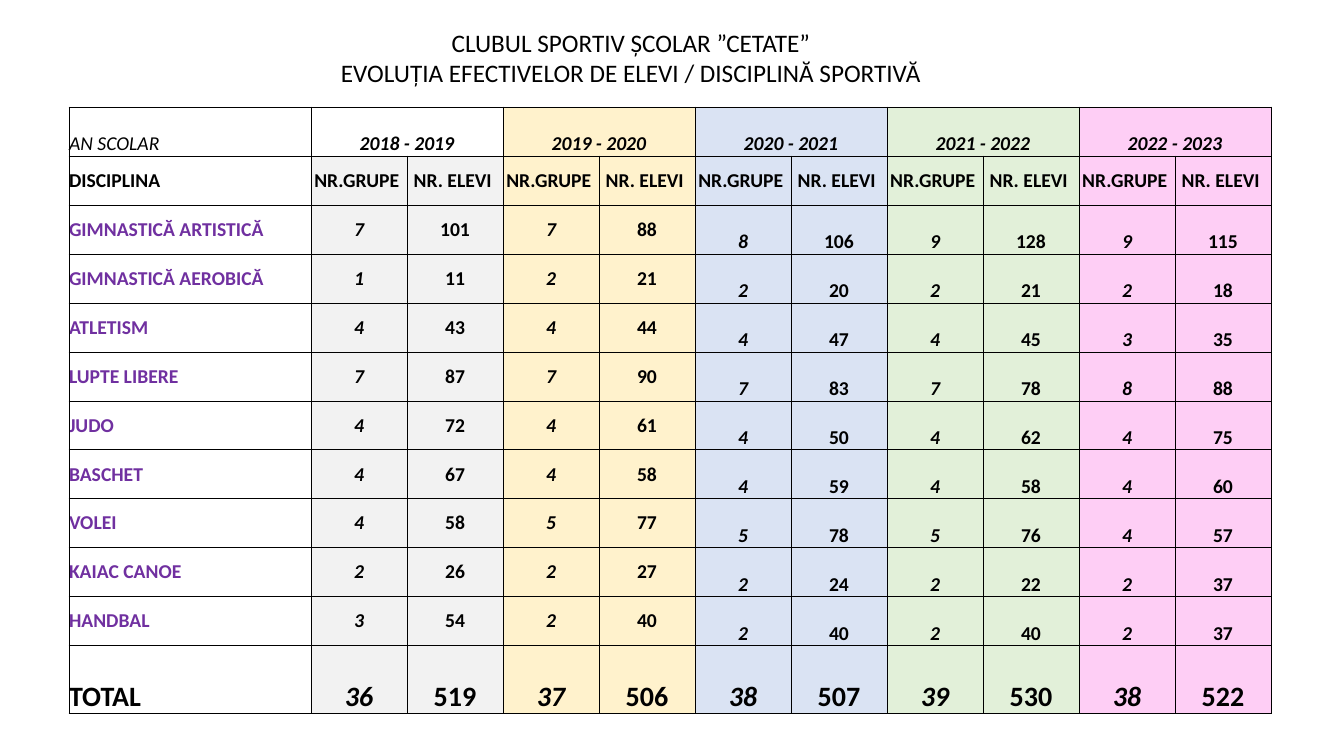
import lxml.etree
import pptx
import pptx.dml.color
import pptx.enum.text
import pptx.oxml.ns
import pptx.util

THEME = {
    "font": "Calibri",
    "text": "000000",
    "discipline": "7030A0",
    "border": "000000",
    "years": ["F2F2F2", "FFF2CC", "DAE3F3", "E2F0D9", "FECEF5"],
    "title_size": 18,
    "cell_size": 14,
    "total_size": 20,
    "border_width": 0.5,
}
ALIGN = pptx.enum.text.PP_ALIGN
ANCHOR = pptx.enum.text.MSO_ANCHOR
qn = pptx.oxml.ns.qn


def px(n):
    return pptx.util.Emu(round(n * 914400 / 100.8))


def write(p, text, size=THEME["cell_size"], color=THEME["text"], bold=False, italic=False, align=ALIGN.CENTER):
    p.alignment = align
    r = p.add_run()
    r.text = text
    r.font.name = THEME["font"]
    r.font.size = pptx.util.Pt(size)
    r.font.color.rgb = pptx.dml.color.RGBColor.from_string(color)
    r.font.bold = bold
    r.font.italic = italic


years = ["2018 - 2019", "2019 - 2020", "2020 - 2021", "2021 - 2022", "2022 - 2023"]
disciplines = [
    ("GIMNASTICĂ ARTISTICĂ", 7, 101, 7, 88, 8, 106, 9, 128, 9, 115),
    ("GIMNASTICĂ AEROBICĂ", 1, 11, 2, 21, 2, 20, 2, 21, 2, 18),
    ("ATLETISM", 4, 43, 4, 44, 4, 47, 4, 45, 3, 35),
    ("LUPTE LIBERE", 7, 87, 7, 90, 7, 83, 7, 78, 8, 88),
    ("JUDO", 4, 72, 4, 61, 4, 50, 4, 62, 4, 75),
    ("BASCHET", 4, 67, 4, 58, 4, 59, 4, 58, 4, 60),
    ("VOLEI", 4, 58, 5, 77, 5, 78, 5, 76, 4, 57),
    ("KAIAC CANOE", 2, 26, 2, 27, 2, 24, 2, 22, 2, 37),
    ("HANDBAL", 3, 54, 2, 40, 2, 40, 2, 40, 2, 37),
]
total = ("TOTAL", 36, 519, 37, 506, 38, 507, 39, 530, 38, 522)
year_row = ["AN SCOLAR"]
for year in years:
    year_row += [year, ""]
label_row = ["DISCIPLINA"] + ["NR.GRUPE ", "NR. ELEVI "] * len(years)
rows = [year_row, label_row, *disciplines, total]
last = len(rows) - 1

prs = pptx.Presentation()
prs.slide_width, prs.slide_height = px(1344), px(756)
slide = prs.slides.add_slide(prs.slide_layouts[5])

title = slide.shapes.title
title.left, title.top, title.width, title.height = px(328), px(22), px(606), px(72)
tf = title.text_frame
tf.word_wrap = False
tf.auto_size = pptx.enum.text.MSO_AUTO_SIZE.SHAPE_TO_FIT_TEXT
tf.vertical_anchor = ANCHOR.TOP
write(tf.paragraphs[0], "CLUBUL SPORTIV ȘCOLAR ”CETATE”", size=THEME["title_size"])
write(tf.add_paragraph(), "EVOLUȚIA EFECTIVELOR DE ELEVI / DISCIPLINĂ SPORTIVĂ", size=THEME["title_size"])

label_width, value_width, row_height, total_height = 242, 96, 49, 68
columns = len(label_row)
table = slide.shapes.add_table(
    len(rows), columns, px(69), px(107),
    px(label_width + value_width * (columns - 1)),
    px(row_height * last + total_height),
).table
table.first_row = False
table.horz_banding = False
for c in range(columns):
    table.columns[c].width = px(value_width if c else label_width)
for r in range(len(rows)):
    table.rows[r].height = px(total_height if r == last else row_height)
for c in range(1, columns, 2):
    table.cell(0, c).merge(table.cell(0, c + 1))

for r, row in enumerate(rows):
    for c, value in enumerate(row):
        cell = table.cell(r, c)
        cell.margin_left = cell.margin_right = cell.margin_top = cell.margin_bottom = 0
        is_data = 1 < r < last
        at_bottom = r in (0, last) or (is_data and c >= 5)
        cell.vertical_anchor = ANCHOR.BOTTOM if at_bottom else ANCHOR.MIDDLE

        tcPr = cell._tc.get_or_add_tcPr()
        for side in ("a:lnL", "a:lnR", "a:lnT", "a:lnB"):
            ln = lxml.etree.SubElement(tcPr, qn(side), w=str(pptx.util.Pt(THEME["border_width"])))
            fill = lxml.etree.SubElement(ln, qn("a:solidFill"))
            lxml.etree.SubElement(fill, qn("a:srgbClr"), val=THEME["border"])

        if c == 0 or (r == 0 and c < 3):
            cell.fill.background()
        else:
            cell.fill.solid()
            cell.fill.fore_color.rgb = pptx.dml.color.RGBColor.from_string(THEME["years"][(c - 1) // 2])

        if cell.is_spanned:
            continue
        write(
            cell.text_frame.paragraphs[0],
            str(value),
            size=THEME["total_size"] if r == last else THEME["cell_size"],
            color=THEME["discipline"] if is_data and c == 0 else THEME["text"],
            bold=(r, c) != (0, 0),
            italic=r == 0 or (r > 1 and c % 2 == 1),
            align=ALIGN.CENTER if c else ALIGN.LEFT,
        )

prs.save("out.pptx")
